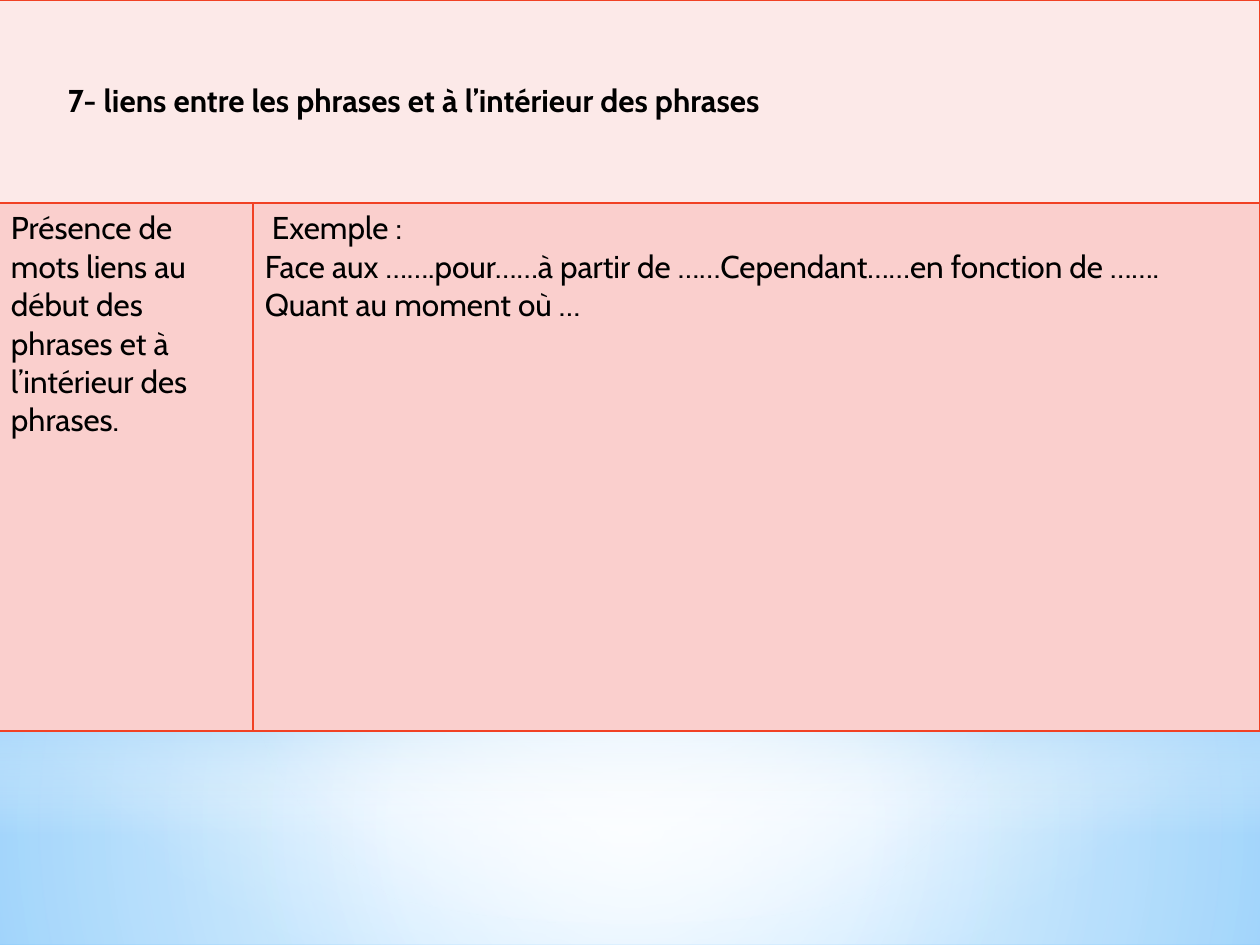
from lxml import etree
from pptx import Presentation
from pptx.dml.color import RGBColor
from pptx.enum.shapes import MSO_SHAPE
from pptx.enum.text import MSO_ANCHOR
from pptx.oxml.ns import qn
from pptx.util import Pt

RECT, OVAL = MSO_SHAPE.RECTANGLE, MSO_SHAPE.OVAL
MIDDLE, TOP = MSO_ANCHOR.MIDDLE, MSO_ANCHOR.TOP
SCALE = 914400 / 126
WIDE, HIGH = 1260, 945
RED, PALE, PINK = "F14124", "FCE9E8", "FACFCD"
WHITE, SKY = "FFFFFF", "B4DCFA"
CENTER = (50, 50, 50, 50)


def px(n):
    return round(n * SCALE)


def color(code):
    return RGBColor.from_string(code)


def add(node, tag, **attrs):
    return etree.SubElement(node, qn(tag), {k: str(v) for k, v in attrs.items()})


def shade(host, fill, stops, focus=None):
    fill.solid()
    solid = host.find(".//" + qn("a:solidFill"))
    grad = etree.Element(qn("a:gradFill"), rotWithShape="1")
    steps = add(grad, "a:gsLst")
    for place, code, alpha in stops:
        stop = add(steps, "a:gs", pos=place * 1000)
        tint = add(stop, "a:srgbClr", val=code)
        if alpha < 100:
            add(tint, "a:alpha", val=alpha * 1000)
    if focus:
        path = add(grad, "a:path", path="circle")
        sides = {k: v * 1000 for k, v in zip("ltrb", focus)}
        add(path, "a:fillToRect", **sides)
    else:
        add(grad, "a:lin", ang=90 * 60000, scaled=0)
    solid.getparent().replace(solid, grad)


def layer(slide, kind, top, high, stops, focus=None):
    shape = slide.shapes.add_shape(kind, 0, px(top), px(WIDE), px(high))
    shape.shadow.inherit = False
    shape.line.fill.background()
    shade(shape.element, shape.fill, stops, focus)


def write(frame, lines, size=18, bold=False, indent=0):
    for i, line in enumerate(lines):
        para = frame.paragraphs[0] if i == 0 else frame.add_paragraph()
        run = para.add_run()
        run.text = line
        font = run.font
        font.name, font.size, font.bold = "Cabin", Pt(size), bold
        font.color.rgb = color("000000")
    first = frame.paragraphs[0]._p.get_or_add_pPr()
    first.set("marL", "0")
    first.set("indent", str(px(indent)))


def border(cell, code):
    props = cell._tc.get_or_add_tcPr()
    for i, side in enumerate("LRTB"):
        line = etree.Element(qn("a:ln" + side), w=str(Pt(1)))
        add(add(line, "a:solidFill"), "a:srgbClr", val=code)
        props.insert(i, line)


def style(cell, fill, left=12, anchor=TOP):
    cell.fill.solid()
    cell.fill.fore_color.rgb = color(fill)
    cell.margin_left = px(left)
    cell.vertical_anchor = anchor
    border(cell, RED)


def grid(slide, cols, rows):
    frame = slide.shapes.add_table(len(rows), len(cols), px(-1), 0,
                                   px(sum(cols)), px(sum(rows)))
    table = frame.table
    for col, wide in zip(table.columns, cols):
        col.width = px(wide)
    for row, high in zip(table.rows, rows):
        row.height = px(high)
    return table


def main():
    deck = Presentation()
    deck.slide_width, deck.slide_height = px(WIDE), px(HIGH)
    slide = deck.slides.add_slide(deck.slide_layouts[6])

    fill = slide.background.fill
    fill.solid()
    shade(slide.element.find(".//" + qn("p:bg")), fill,
          [(0, "9ED5FF", 100), (60, WHITE, 100), (100, "5BB9FF", 100)],
          (20, 10, 20, 60))
    layer(slide, RECT, 703, 242,
          [(0, WHITE, 91), (37, WHITE, 76), (100, SKY, 79)], CENTER)
    layer(slide, RECT, 0, 703,
          [(0, WHITE, 89), (48, WHITE, 62), (100, SKY, 79)], CENTER)
    layer(slide, RECT, 519, 315,
          [(0, WHITE, 0), (29, WHITE, 30), (45, SKY, 40),
           (55, WHITE, 26), (65, SKY, 60), (100, WHITE, 0)])
    layer(slide, OVAL, 220, 703, [(0, WHITE, 100), (56, WHITE, 0)], CENTER)

    table = grid(slide, (254, 1007), (203, 528))
    head, rest = table.cell(0, 0), table.cell(0, 1)
    head.merge(rest)
    style(head, PALE, left=69, anchor=MIDDLE)
    style(rest, PALE)
    write(head.text_frame,
          ["7- liens entre les phrases et à l’intérieur des phrases"], bold=True)
    label, sample = table.cell(1, 0), table.cell(1, 1)
    for cell in (label, sample):
        style(cell, PINK)
    write(label.text_frame,
          ["Présence de mots liens au début des phrases et à l’intérieur des phrases."])
    write(sample.text_frame,
          ["Exemple :",
           "Face aux …….pour……à partir de ……Cependant……en fonction de ……. "
           "Quant au moment où …"], indent=7)
    deck.save("out.pptx")


if __name__ == "__main__":
    main()
